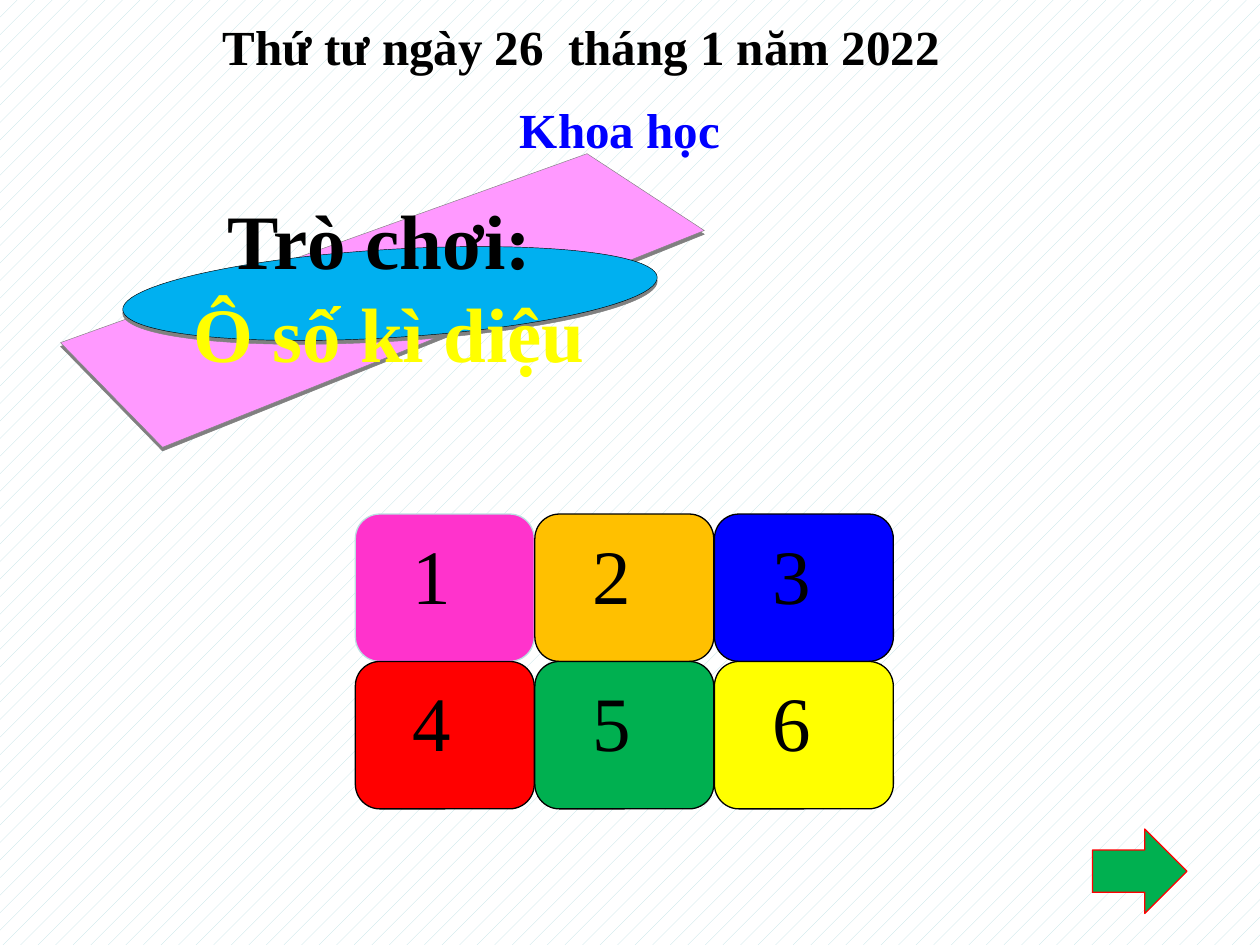
from pptx import Presentation, util as u
from pptx.dml.color import RGBColor
from pptx.enum import dml, shapes, text

THEME = {
    "font": "Times New Roman",
    "size": {"heading": 28, "display": 44},
    "black": "000000", "white": "FFFFFF", "pale": "BBE0E3",
    "blue": "0000FF", "sky": "00B0F0", "pink": "FF99FF", "magenta": "FF33CC",
    "amber": "FFC000", "red": "FF0000", "green": "00B050",
    "yellow": "FFFF00", "edge": "808080",
}

# Content: (text, colour, alignment) and (number, fill, outline)
HEADING = [
    ("Thứ tư ngày 26  tháng 1 năm 2022", "black", text.PP_ALIGN.LEFT),
    ("Khoa học", "blue", text.PP_ALIGN.CENTER),
]
GAME_TITLE = [
    ("Trò chơi: ", "black", text.PP_ALIGN.CENTER),
    ("Ô số kì diệu", "yellow", text.PP_ALIGN.CENTER),
]
TILES = [
    ("1", "magenta", "pale"), ("2", "amber", "black"), ("3", "blue", "black"),
    ("4", "red", "black"), ("5", "green", "black"), ("6", "yellow", "black"),
]

# Layout in inches
WIDTH, HEIGHT = 10, 7.5
GRID = {"left": 2.82, "top": 4.08, "columns": 3, "column": 1.425, "row": 1.17}
TILE_SIZE = (1.42, 1.17)
BANNER = [(4.66, 1.22), (5.59, 1.83), (1.29, 3.55), (0.48, 2.72)]
OVAL = (0.97, 1.98, 4.25, 0.7)
EDGE_DEPTH = 0.03

presentation = Presentation()
presentation.slide_width = u.Inches(WIDTH)
presentation.slide_height = u.Inches(HEIGHT)
slide = presentation.slides.add_slide(presentation.slide_layouts[6])


def color(name):
    return RGBColor.from_string(THEME[name])


def paint(shape, fill, line, width=0.75):
    shape.shadow.inherit = False
    shape.fill.solid()
    shape.fill.fore_color.rgb = color(fill)
    shape.line.color.rgb = color(line)
    shape.line.width = u.Pt(width)
    return shape


def add_preset(kind, box, fill, line, width=0.75):
    shape = slide.shapes.add_shape(kind, *map(u.Inches, box))
    return paint(shape, fill, line, width)


def style(paragraph, size, name, bold, alignment):
    paragraph.alignment = alignment
    for run in paragraph.runs:
        run.font.name = THEME["font"]
        run.font.size = u.Pt(THEME["size"][size])
        run.font.bold = bold
        run.font.color.rgb = color(name)


def add_lines(box, lines, size, gap=0):
    frame = slide.shapes.add_textbox(*map(u.Inches, box)).text_frame
    frame.word_wrap = True
    frame.text = "\n".join(line[0] for line in lines)
    for index, (paragraph, line) in enumerate(zip(frame.paragraphs, lines)):
        style(paragraph, size, line[1], True, line[2])
        paragraph.space_before = u.Pt(gap if index else 0)


# Background pattern
background = slide.background.fill
background.patterned()
background.pattern = dml.MSO_PATTERN.PERCENT_5
background.fore_color.rgb = color("pale")
background.back_color.rgb = color("white")

# Numbered tiles, filled row by row
for index, (number, fill, line) in enumerate(TILES):
    row, column = divmod(index, GRID["columns"])
    box = (GRID["left"] + column * GRID["column"],
           GRID["top"] + row * GRID["row"], *TILE_SIZE)
    tile = add_preset(shapes.MSO_SHAPE.ROUNDED_RECTANGLE, box, fill, line)
    frame = tile.text_frame
    frame.margin_left = u.Inches(0.4)
    frame.vertical_anchor = text.MSO_ANCHOR.TOP
    frame.text = number
    style(frame.paragraphs[0], "display", "black", False, text.PP_ALIGN.LEFT)

# Date and subject
add_lines((1.67, 0.08, 6.5, 1.99), HEADING, "heading", gap=14)

# Slanted banner and oval, each above its grey edge
LAYERS = ((EDGE_DEPTH, "edge"), (0, None))
for drop, edge in LAYERS:
    points = [(u.Inches(x), u.Inches(y + drop)) for x, y in BANNER]
    builder = slide.shapes.build_freeform(*points[0])
    builder.add_line_segments(points[1:], close=True)
    paint(builder.convert_to_shape(), edge or "pink", "edge", 0.25)
for drop, edge in LAYERS:
    left, top, width, height = OVAL
    oval = add_preset(shapes.MSO_SHAPE.OVAL, (left, top + drop, width, height),
                      edge or "sky", edge or "black", 0.25)
    oval.rotation = -3.5

# Game title
add_lines((1, 1.48, 4.18, 1.58), GAME_TITLE, "display")

# Next arrow
add_preset(shapes.MSO_SHAPE.RIGHT_ARROW, (8.67, 6.58, 0.75, 0.67), "green", "red")

presentation.save("out.pptx")
